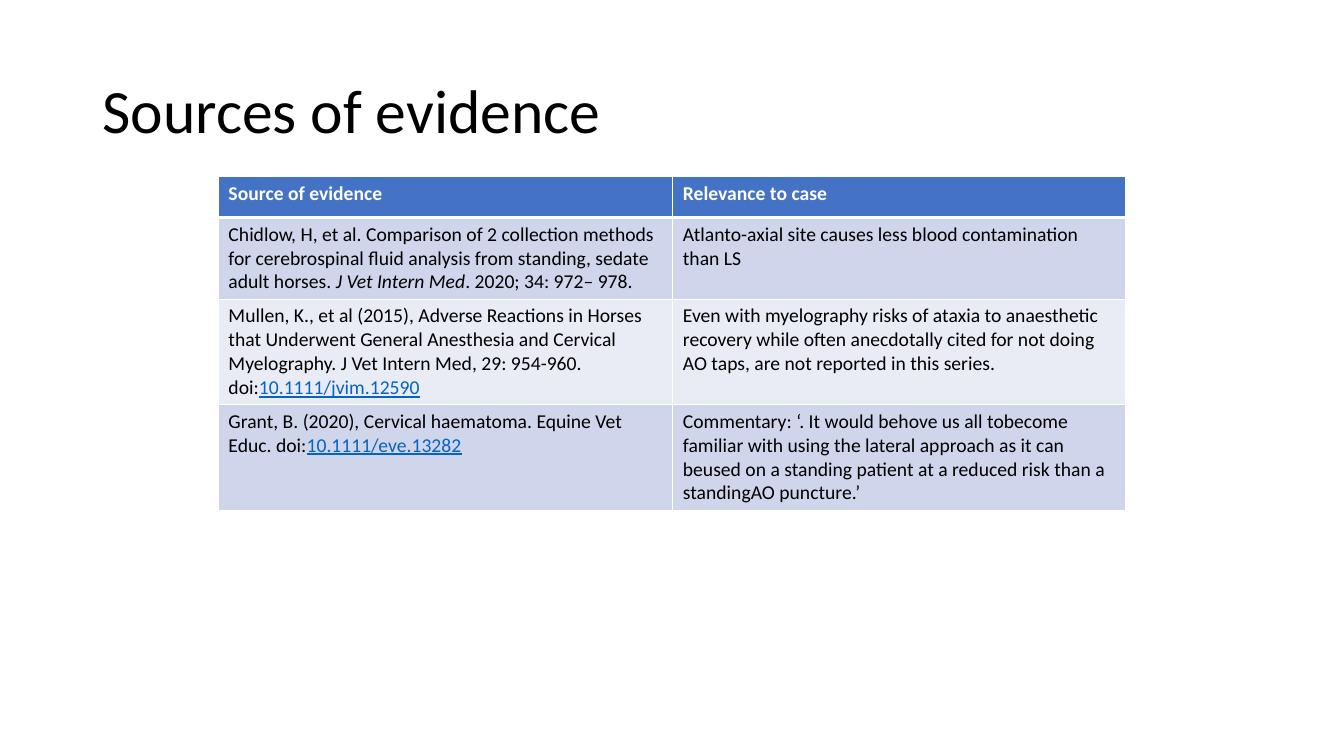
from dataclasses import dataclass

from lxml.etree import SubElement
from pptx import Presentation
from pptx.dml.color import RGBColor
from pptx.enum.text import MSO_ANCHOR, MSO_AUTO_SIZE, PP_ALIGN
from pptx.oxml.ns import qn
from pptx.slide import Slide
from pptx.table import _Cell as Cell
from pptx.text.text import _Paragraph as Paragraph
from pptx.util import Emu, Inches, Pt

BLACK = RGBColor(0x00, 0x00, 0x00)
WHITE = RGBColor(0xFF, 0xFF, 0xFF)
HEADER_BLUE = RGBColor(0x44, 0x72, 0xC4)
BAND_DARK = RGBColor(0xCF, 0xD5, 0xEA)
BAND_LIGHT = RGBColor(0xE9, 0xEB, 0xF5)
LINK_BLUE = RGBColor(0x05, 0x63, 0xC1)

# The slide is a grid of 160 by 90 square units
GRID_COLUMNS, GRID_ROWS = 160, 90
SLIDE_WIDTH, SLIDE_HEIGHT = Inches(13.33), Inches(7.5)

TITLE_FONT = {"name": "Calibri", "size": Pt(44), "bold": False}
BODY_FONT = {"name": "Calibri", "size": Pt(14), "bold": False}
HEADER_FONT = BODY_FONT | {"bold": True}
ITALIC_FONT = BODY_FONT | {"italic": True}
LINK_FONT = BODY_FONT | {"underline": True}


@dataclass(frozen=True)
class Span:
    text: str
    font: dict
    color: RGBColor = BLACK


@dataclass(frozen=True)
class TableRow:
    source: list[Span]
    relevance: list[Span]
    fill: RGBColor


def body(text: str) -> Span:
    return Span(text, BODY_FONT)


def header(text: str) -> Span:
    return Span(text, HEADER_FONT, WHITE)


def doi(text: str) -> Span:
    return Span(text, LINK_FONT, LINK_BLUE)


TABLE_ROWS = [
    TableRow([header("Source of evidence")], [header("Relevance to case")], HEADER_BLUE),
    TableRow(
        [
            body("Chidlow, H, et al. Comparison of 2 collection methods for cerebrospinal "
                 "fluid analysis from standing, sedate adult horses. "),
            Span("J Vet Intern Med", ITALIC_FONT),
            body(". 2020; 34: 972– 978. "),
        ],
        [body("Atlanto-axial site causes less blood contamination than LS")],
        BAND_DARK,
    ),
    TableRow(
        [
            body("Mullen, K., et al (2015), Adverse Reactions in Horses that Underwent General "
                 "Anesthesia and Cervical Myelography. J Vet Intern Med, 29: 954-960. doi:"),
            doi("10.1111/jvim.12590"),
        ],
        [body("Even with myelography risks of ataxia to anaesthetic recovery while often "
              "anecdotally cited for not doing AO taps, are not reported in this series.")],
        BAND_LIGHT,
    ),
    TableRow(
        [
            body("Grant, B. (2020), Cervical haematoma. Equine Vet Educ. doi:"),
            doi("10.1111/eve.13282"),
        ],
        [body("Commentary: ‘. It would behove us all tobecome familiar with using the lateral "
              "approach as it can beused on a standing patient at a reduced risk than a "
              "standingAO puncture.’")],
        BAND_DARK,
    ),
]


def across(columns: float) -> Emu:
    return Emu(round(SLIDE_WIDTH * columns / GRID_COLUMNS))


def down(rows: float) -> Emu:
    return Emu(round(SLIDE_HEIGHT * rows / GRID_ROWS))


def write_spans(paragraph: Paragraph, spans: list[Span]) -> None:
    for span in spans:
        run = paragraph.add_run()
        run.text = span.text
        for attribute, value in span.font.items():
            setattr(run.font, attribute, value)
        run.font.color.rgb = span.color


def add_borders(cell: Cell, widths: dict[str, int]) -> None:
    """Draw white borders; they must come before the fill in the cell's XML."""
    properties = cell._tc.get_or_add_tcPr()
    for side, width in widths.items():
        line = SubElement(properties, qn(f"a:{side}"), w=str(Pt(width)))
        fill = SubElement(line, qn("a:solidFill"))
        SubElement(fill, qn("a:srgbClr"), val=str(WHITE))


def add_title(slide: Slide) -> None:
    title = slide.shapes.title
    title.left, title.top = across(11), down(4.8)
    title.width, title.height = across(138), down(17.4)
    frame = title.text_frame
    frame_format = {
        "word_wrap": True,
        "auto_size": MSO_AUTO_SIZE.NONE,
        "vertical_anchor": MSO_ANCHOR.MIDDLE,
    }
    for attribute, value in frame_format.items():
        setattr(frame, attribute, value)
    paragraph = frame.paragraphs[0]
    paragraph.alignment = PP_ALIGN.LEFT
    paragraph.line_spacing = 0.9
    write_spans(paragraph, [Span("Sources of evidence", TITLE_FONT)])


def add_evidence_table(slide: Slide) -> None:
    column_widths, row_height = (54.1, 53.9), 4.9
    table = slide.shapes.add_table(
        len(TABLE_ROWS), len(column_widths), across(26), down(21),
        across(sum(column_widths)), down(row_height * len(TABLE_ROWS)),
    ).table
    for column, width in zip(table.columns, column_widths):
        column.width = across(width)

    for index, row in enumerate(TABLE_ROWS):
        table.rows[index].height = down(row_height)
        # The rule under the header is thicker
        borders = {
            "lnL": 1,
            "lnR": 1,
            "lnT": 3 if index == 1 else 1,
            "lnB": 3 if index == 0 else 1,
        }
        for cell, spans in zip(table.rows[index].cells, (row.source, row.relevance)):
            add_borders(cell, borders)
            cell.fill.solid()
            cell.fill.fore_color.rgb = row.fill
            write_spans(cell.text_frame.paragraphs[0], spans)


def main() -> None:
    presentation = Presentation()
    presentation.slide_width, presentation.slide_height = SLIDE_WIDTH, SLIDE_HEIGHT
    title_only = presentation.slide_layouts.get_by_name("Title Only")
    slide = presentation.slides.add_slide(title_only)
    add_title(slide)
    add_evidence_table(slide)
    presentation.save("out.pptx")


if __name__ == "__main__":
    main()
